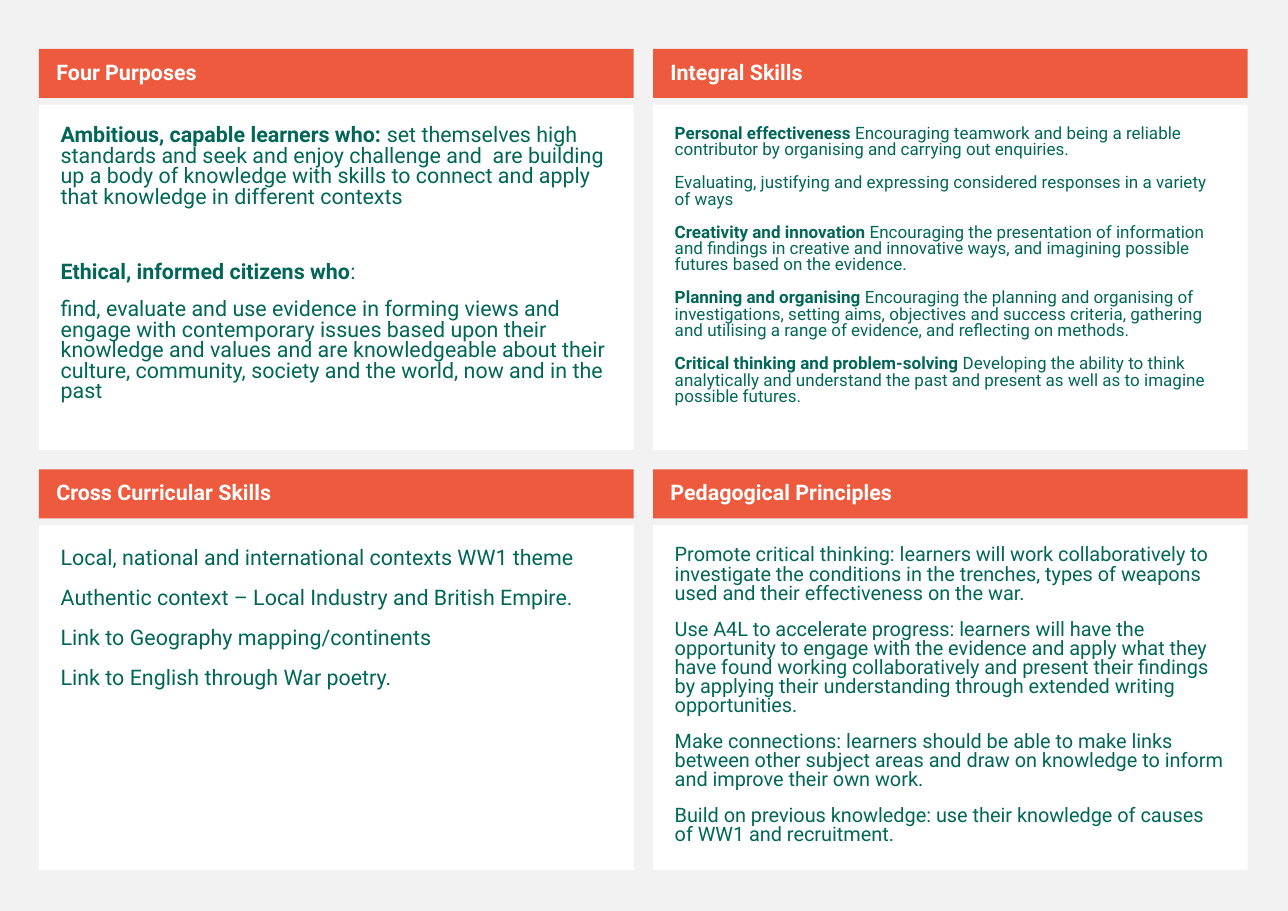
"""Build a curriculum overview slide of four titled text panels."""
from pptx import Presentation
from pptx.dml.color import RGBColor
from pptx.enum.shapes import MSO_SHAPE
from pptx.enum.text import MSO_ANCHOR, PP_ALIGN
from pptx.util import Cm, Pt

RECTANGLE = MSO_SHAPE.RECTANGLE
TOP, MIDDLE = MSO_ANCHOR.TOP, MSO_ANCHOR.MIDDLE
LEFT = PP_ALIGN.LEFT

THEME = {
    "font": "Roboto",
    "background": RGBColor(0xF2, 0xF2, 0xF2),
    "title_fill": RGBColor(0xED, 0x5A, 0x3E),
    "title_text": RGBColor(0xFF, 0xFF, 0xFF),
    "body_fill": RGBColor(0xFF, 0xFF, 0xFF),
    "body_text": RGBColor(0x00, 0x67, 0x58),
    "title_size": 14,
    "space_before": 11,
    "section_space": 35.5,
}

PANELS = [
    {
        "title": "Four Purposes", "size": 14, "line_spacing": 0.8, "sections": [2],
        "paragraphs": [
            ("Ambitious, capable learners who: ",
             "set themselves high standards and seek and enjoy challenge and  are "
             "building up a body of knowledge with skills to connect and apply that "
             "knowledge in different contexts"),
            ("Ethical, informed citizens who", ":"),
            ("", "find, evaluate and use evidence in forming views and engage with "
             "contemporary issues based upon their knowledge and values and are "
             "knowledgeable about their culture, community, society and the world, "
             "now and in the past"),
        ],
    },
    {
        "title": "Integral Skills", "size": 11.1, "line_spacing": 0.8, "sections": [],
        "paragraphs": [
            ("Personal effectiveness",
             " Encouraging teamwork and being a reliable contributor by organising "
             "and carrying out enquiries."),
            ("", "Evaluating, justifying and expressing considered responses in a "
             "variety of ways"),
            ("Creativity and innovation",
             " Encouraging the presentation of information and findings in creative "
             "and innovative ways, and imagining possible futures based on the evidence."),
            ("Planning and organising",
             " Encouraging the planning and organising of investigations, setting aims, "
             "objectives and success criteria, gathering and utilising a range of "
             "evidence, and reflecting on methods."),
            ("Critical thinking and problem-solving",
             " Developing the ability to think analytically and understand the past "
             "and present as well as to imagine possible futures."),
        ],
    },
    {
        "title": "Cross Curricular Skills", "size": 14, "line_spacing": 0.9, "sections": [],
        "paragraphs": [
            ("", "Local, national and international contexts WW1 theme"),
            ("", "Authentic context – Local Industry and British Empire."),
            ("", "Link to Geography mapping/continents"),
            ("", "Link to English through War poetry."),
        ],
    },
    {
        "title": "Pedagogical Principles", "size": 13, "line_spacing": 0.8, "sections": [],
        "paragraphs": [
            ("", "Promote critical thinking: learners will work collaboratively to "
             "investigate the conditions in the trenches, types of weapons used "
             "and their effectiveness on the war."),
            ("", "Use A4L to accelerate progress: learners will have the opportunity to "
             "engage with the evidence and apply what they have found working "
             "collaboratively and present their findings by applying their "
             "understanding through extended writing opportunities."),
            ("", "Make connections: learners should be able to make links between other "
             "subject areas and draw on knowledge to inform and improve their own work."),
            ("", "Build on previous knowledge: use their knowledge of causes "
             "of WW1 and recruitment."),
        ],
    },
]

COLUMNS = 2
GRID_LEFT, GRID_TOP = 0.9, 1.13
COLUMN_STEP, ROW_STEP = 14.16, 9.69
PANEL_WIDTH, TITLE_HEIGHT, BODY_HEIGHT = 13.71, 1.13, 7.96
BODY_OFFSET = 1.28
TITLE_MARGINS = (0.4, 0.13, 0.25, 0.13)
BODY_MARGINS = (0.5, 0.5, 0.5, 0.5)


def add_box(slide, left, top, height, fill, margins, anchor):
    """Add a filled rectangle and return its text frame."""
    shape = slide.shapes.add_shape(
        RECTANGLE, Cm(left), Cm(top), Cm(PANEL_WIDTH), Cm(height))
    shape.shadow.inherit = False
    shape.fill.solid()
    shape.fill.fore_color.rgb = fill
    shape.line.fill.background()
    frame = shape.text_frame
    frame.word_wrap = True
    frame.vertical_anchor = anchor
    (frame.margin_left, frame.margin_top,
     frame.margin_right, frame.margin_bottom) = map(Cm, margins)
    return frame


def write_paragraphs(frame, paragraphs, size, color, line_spacing, sections=()):
    """Write (bold, regular) text pairs, one paragraph each."""
    frame.text = "\n".join(bold + regular for bold, regular in paragraphs)
    for index, (paragraph, (bold, regular)) in enumerate(zip(frame.paragraphs, paragraphs)):
        paragraph.alignment = LEFT
        paragraph.line_spacing = line_spacing
        starts_section = index + 1 in sections
        paragraph.space_before = Pt(THEME["section_space" if starts_section else "space_before"])
        if bold and regular:
            paragraph.runs[0].text = bold
            paragraph.add_run().text = regular
        for position, run in enumerate(paragraph.runs):
            run.font.name = THEME["font"]
            run.font.size = Pt(size)
            run.font.color.rgb = color
            run.font.bold = bool(bold) and position == 0


def add_panel(slide, index, panel):
    """Add one title bar with its body below it."""
    row, column = divmod(index, COLUMNS)
    left = GRID_LEFT + column * COLUMN_STEP
    top = GRID_TOP + row * ROW_STEP
    body = add_box(slide, left, top + BODY_OFFSET, BODY_HEIGHT,
                   THEME["body_fill"], BODY_MARGINS, TOP)
    write_paragraphs(body, panel["paragraphs"], panel["size"], THEME["body_text"],
                     panel["line_spacing"], panel["sections"])
    title = add_box(slide, left, top, TITLE_HEIGHT,
                    THEME["title_fill"], TITLE_MARGINS, MIDDLE)
    write_paragraphs(title, [(panel["title"], "")], THEME["title_size"],
                     THEME["title_text"], 0.9)


def main():
    """Create the slide and save it."""
    presentation = Presentation()
    presentation.slide_width, presentation.slide_height = Cm(29.7), Cm(21)
    slide = presentation.slides.add_slide(presentation.slide_layouts[6])
    slide.background.fill.solid()
    slide.background.fill.fore_color.rgb = THEME["background"]
    for index, panel in enumerate(PANELS):
        add_panel(slide, index, panel)
    presentation.save("out.pptx")


if __name__ == "__main__":
    main()
